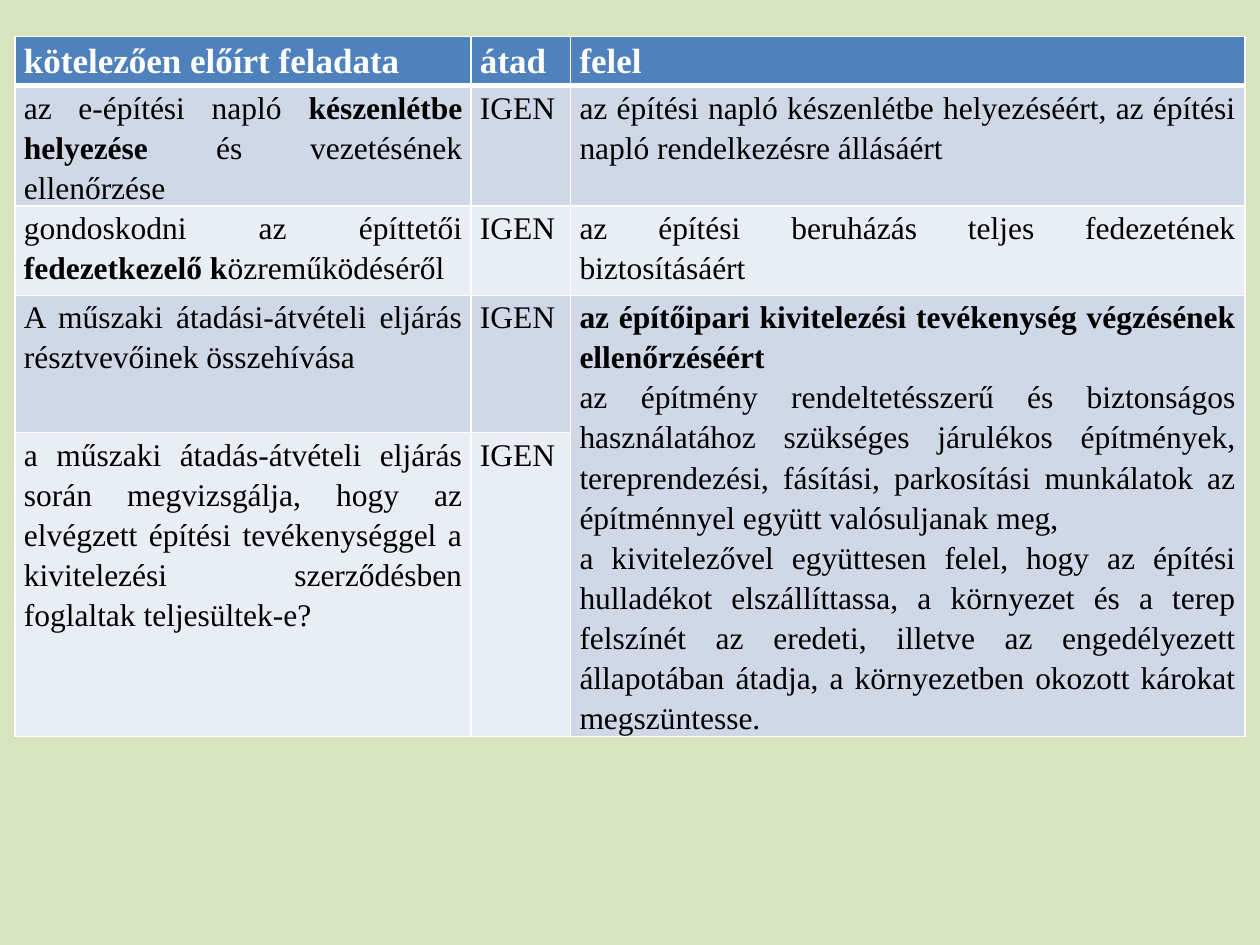
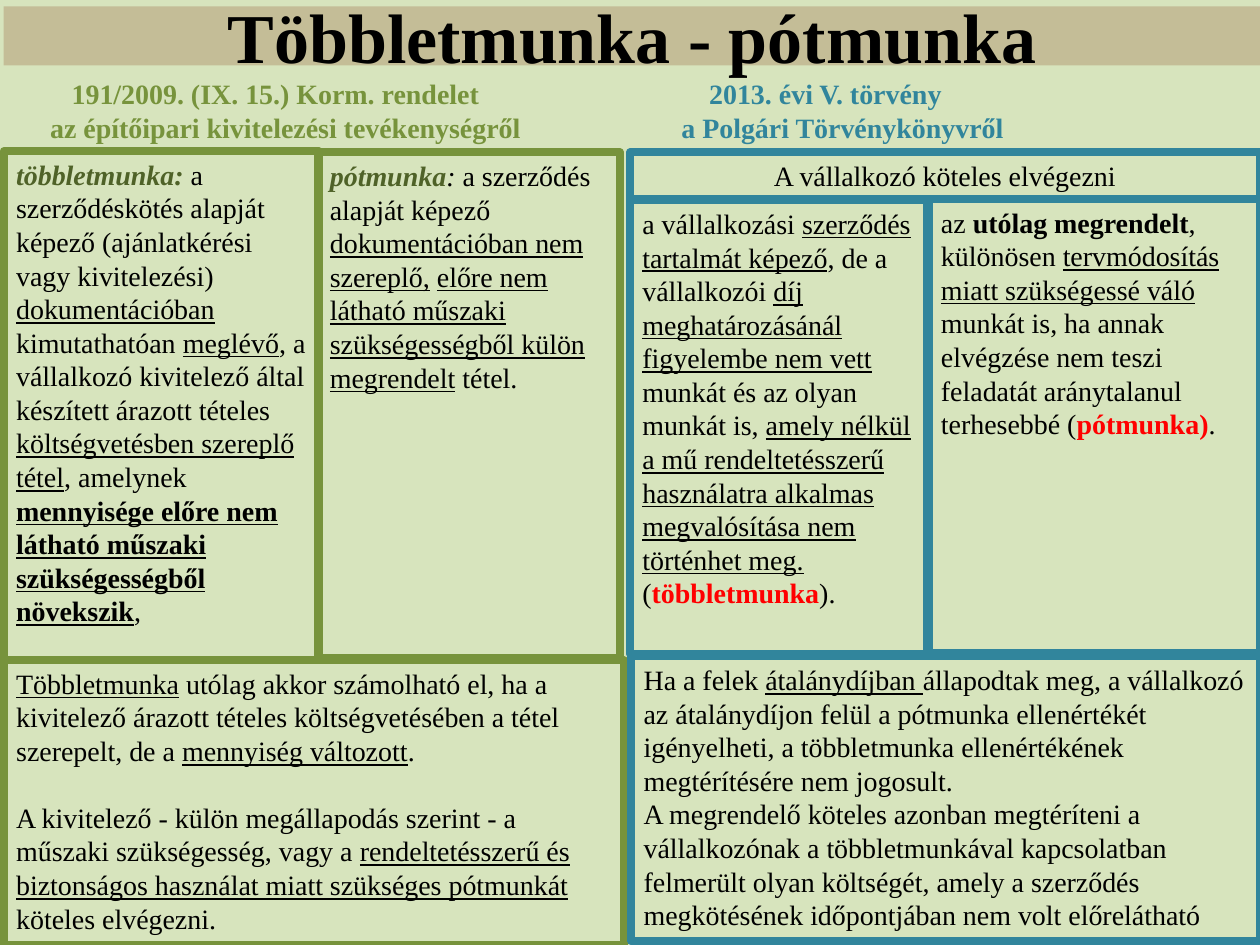
from lxml import etree
from pptx import Presentation
from pptx.dml.color import RGBColor
from pptx.enum import shapes, text
from pptx.oxml.ns import qn
from pptx.util import Inches, Pt

FONT = "Times New Roman"
BACK, TAN = "D7E4BD", "C4BD97"
GREEN, TEAL = "77933C", "31859C"
BLACK, WHITE = "000000", "FFFFFF"
HEAD, BANDS = "4F81BD", ("D0D8E8", "E9EDF4")
TINTS = {"g": "4F6228", "r": "FF0000"}


def color(code):
    return RGBColor.from_string(code)


class Deck:
    def __init__(self):
        self.prs = Presentation()
        self.prs.slide_width, self.prs.slide_height = Inches(10), Inches(7.5)
        self.slide = None

    def page(self):
        self.slide = self.prs.slides.add_slide(self.prs.slide_layouts[6])
        fill = self.slide.background.fill
        fill.solid()
        fill.fore_color.rgb = color(BACK)

    def prose(self, frame, paras, size=16, tint=BLACK, bold=False,
              align=text.PP_ALIGN.LEFT, lead=None, gap=0):
        frame.word_wrap = True
        for n, parts in enumerate(paras):
            para = frame.add_paragraph() if n else frame.paragraphs[0]
            para.alignment = align
            para.line_spacing = lead
            if n and gap:
                para.space_before = Pt(gap)
            for part in [parts] if isinstance(parts, str) else parts:
                words, marks = (part, "") if isinstance(part, str) else part
                run = para.add_run()
                run.text = words
                font = run.font
                font.name, font.size = FONT, Pt(size)
                font.bold = bold or "b" in marks
                font.italic = "i" in marks
                font.underline = "u" in marks
                hues = [TINTS[m] for m in marks if m in TINTS]
                font.color.rgb = color(hues[0] if hues else tint)

    def box(self, spot, paras, line=None, fill=None,
            anchor=text.MSO_ANCHOR.TOP, **style):
        shape = self.slide.shapes.add_shape(
            shapes.MSO_SHAPE.RECTANGLE, *map(Inches, spot))
        shape.shadow.inherit = False
        if fill:
            shape.fill.solid()
            shape.fill.fore_color.rgb = color(fill)
        else:
            shape.fill.background()
        if line:
            shape.line.color.rgb = color(line)
            shape.line.width = Pt(4.5)
        else:
            shape.line.fill.background()
        shape.text_frame.vertical_anchor = anchor
        self.prose(shape.text_frame, paras, **style)

    def label(self, spot, paras, indent, tint):
        frame = self.slide.shapes.add_textbox(*map(Inches, spot)).text_frame
        self.prose(frame, paras, tint=tint, bold=True)
        props = frame.paragraphs[0]._p.get_or_add_pPr()
        props.set("marL", str(Inches(indent)))

    def border(self, cell, side, width):
        props = cell._tc.get_or_add_tcPr()
        line = etree.SubElement(props, qn("a:" + side), w=str(Pt(width)))
        fill = etree.SubElement(line, qn("a:solidFill"))
        etree.SubElement(fill, qn("a:srgbClr"), val=WHITE)

    def table(self, left, top, widths, heights, rows, merge):
        spot = left, top, sum(widths), sum(heights)
        grid = self.slide.shapes.add_table(
            len(rows), len(widths), *map(Inches, spot)).table
        for col, width in zip(grid.columns, widths):
            col.width = Inches(width)
        for r, (row, height) in enumerate(zip(rows, heights)):
            grid.rows[r].height = Inches(height)
            for c, paras in enumerate(row):
                cell = grid.cell(r, c)
                cell.margin_left = cell.margin_right = Inches(0.07)
                cell.margin_top = cell.margin_bottom = 0
                for side in ("lnL", "lnR", "lnT", "lnB"):
                    thick = side == "lnB" and r == 0 or side == "lnT" and r == 1
                    self.border(cell, side, 3 if thick else 1)
                cell.fill.solid()
                cell.fill.fore_color.rgb = color(BANDS[(r - 1) % 2] if r else HEAD)
                self.prose(cell.text_frame, paras, size=18 if r else 20,
                           tint=BLACK if r else WHITE, bold=r == 0,
                           align=text.PP_ALIGN.JUSTIFY, lead=1.15)
        first, last = merge
        grid.cell(*first).merge(grid.cell(*last))


def duties(deck):
    deck.page()
    yes = ["IGEN"]
    rows = [
        (["kötelezően előírt feladata"], ["átad"], ["felel"]),
        ([["az e-építési napló ", ("készenlétbe helyezése", "b"),
           " és vezetésének ellenőrzése"]], yes,
         ["az építési napló készenlétbe helyezéséért, az építési napló "
          "rendelkezésre állásáért"]),
        ([["gondoskodni az építtetői ", ("fedezetkezelő k", "b"),
           "özreműködéséről"]], yes,
         ["az építési beruházás teljes fedezetének biztosításáért"]),
        (["A műszaki átadási-átvételi eljárás résztvevőinek összehívása"], yes,
         [[("az építőipari kivitelezési tevékenység végzésének "
            "ellenőrzéséért", "b")],
          "az építmény rendeltetésszerű és biztonságos használatához "
          "szükséges járulékos építmények, tereprendezési, fásítási, "
          "parkosítási munkálatok az építménnyel együtt valósuljanak meg,",
          "a kivitelezővel együttesen felel, hogy az építési hulladékot "
          "elszállíttassa, a környezet és a terep felszínét az eredeti, "
          "illetve az engedélyezett állapotában átadja, a környezetben "
          "okozott károkat megszüntesse."]),
        (["a műszaki átadás-átvételi eljárás során megvizsgálja, hogy az "
          "elvégzett építési tevékenységgel a kivitelezési szerződésben "
          "foglaltak teljesültek-e?"], yes, []),
    ]
    deck.table(0.12, 0.29, (3.62, 0.79, 5.35), (0.39, 0.95, 0.71, 1.09, 2.41),
               rows, ((3, 2), (4, 2)))


def extras(deck):
    deck.page()
    center = text.PP_ALIGN.CENTER
    deck.box((0.03, 0.05, 9.97, 0.47), ["Többletmunka - pótmunka"], fill=TAN,
             anchor=text.MSO_ANCHOR.MIDDLE, size=40, bold=True, align=center)
    deck.label((0.3, 0.56, 4.6, 0.64),
               ["191/2009. (IX. 15.) Korm. rendelet",
                "az építőipari kivitelezési tevékenységről"], 0.17, GREEN)
    deck.label((5.31, 0.56, 4.6, 0.64),
               ["2013. évi V. törvény", "a Polgári Törvénykönyvről"], 0.22, TEAL)

    deck.box((0.03, 1.2, 2.5, 4.04), [[
        ("többletmunka: ", "big"),
        "a szerződéskötés alapját képező (ajánlatkérési vagy kivitelezési) ",
        ("dokumentációban", "u"), " kimutathatóan ", ("meglévő", "u"),
        ", a vállalkozó kivitelező által készített árazott tételes ",
        ("költségvetésben szereplő tétel", "u"), ", amelynek ",
        ("mennyisége előre nem látható műszaki szükségességből növekszik", "bu"),
        ","]], GREEN)
    deck.box((2.52, 1.21, 2.4, 4.01), [[
        ("pótmunka", "big"), (": ", "i"), "a szerződés alapját képező ",
        ("dokumentációban nem szereplő,", "u"), " ",
        ("előre nem látható műszaki szükségességből külön megrendelt", "u"),
        " tétel."]], GREEN)
    deck.box((0.03, 5.24, 4.92, 2.26), [
        [("Többletmunka", "u"),
         " utólag akkor számolható el, ha a kivitelező árazott tételes "
         "költségvetésében a tétel szerepelt, de a ",
         ("mennyiség változott", "u"), "."],
        ["A kivitelező - külön megállapodás szerint - a műszaki "
         "szükségesség, vagy a ",
         ("rendeltetésszerű és biztonságos használat miatt szükséges "
          "pótmunkát ", "u"), "köteles elvégezni."]], GREEN, gap=19)

    deck.box((5, 1.59, 2.36, 3.6), [[
        "a vállalkozási ", ("szerződés tartalmát képező", "u"),
        ", de a vállalkozói ",
        ("díj meghatározásánál figyelembe nem vett ", "u"),
        "munkát és az olyan munkát is, ",
        ("amely nélkül a mű rendeltetésszerű használatra alkalmas "
         "megvalósítása nem történhet meg.", "u"),
        " (", ("többletmunka", "br"), ")."]], TEAL)
    deck.box((7.37, 1.58, 2.63, 3.6), [[
        "az ", ("utólag megrendelt", "b"), ", különösen ",
        ("tervmódosítás miatt szükségessé váló ", "u"),
        "munkát is, ha annak elvégzése nem teszi feladatát aránytalanul "
        "terhesebbé (", ("pótmunka)", "br"), "."]], TEAL)
    deck.box((5, 1.21, 5, 0.37), ["A vállalkozó köteles elvégezni"], TEAL,
             align=center)
    deck.box((5.01, 5.21, 4.99, 2.26), [
        ["Ha a felek ", ("átalánydíjban ", "u"),
         "állapodtak meg, a vállalkozó az átalánydíjon felül a pótmunka "
         "ellenértékét igényelheti, a többletmunka ellenértékének "
         "megtérítésére nem jogosult."],
        "A megrendelő köteles azonban megtéríteni a vállalkozónak a "
        "többletmunkával kapcsolatban felmerült olyan költségét, amely a "
        "szerződés megkötésének időpontjában nem volt előrelátható"], TEAL)


def main():
    deck = Deck()
    duties(deck)
    extras(deck)
    deck.prs.save("out.pptx")


if __name__ == "__main__":
    main()
